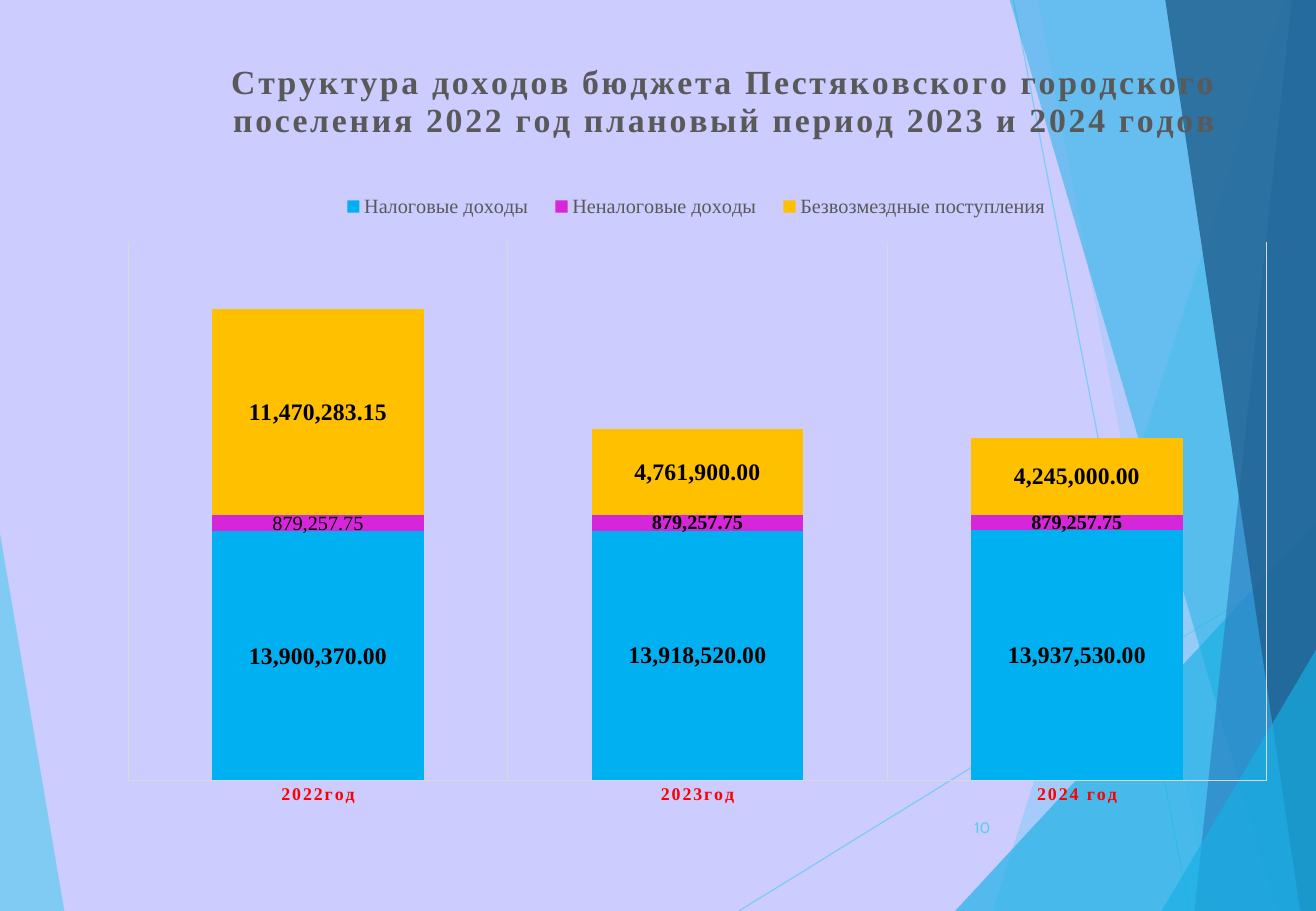
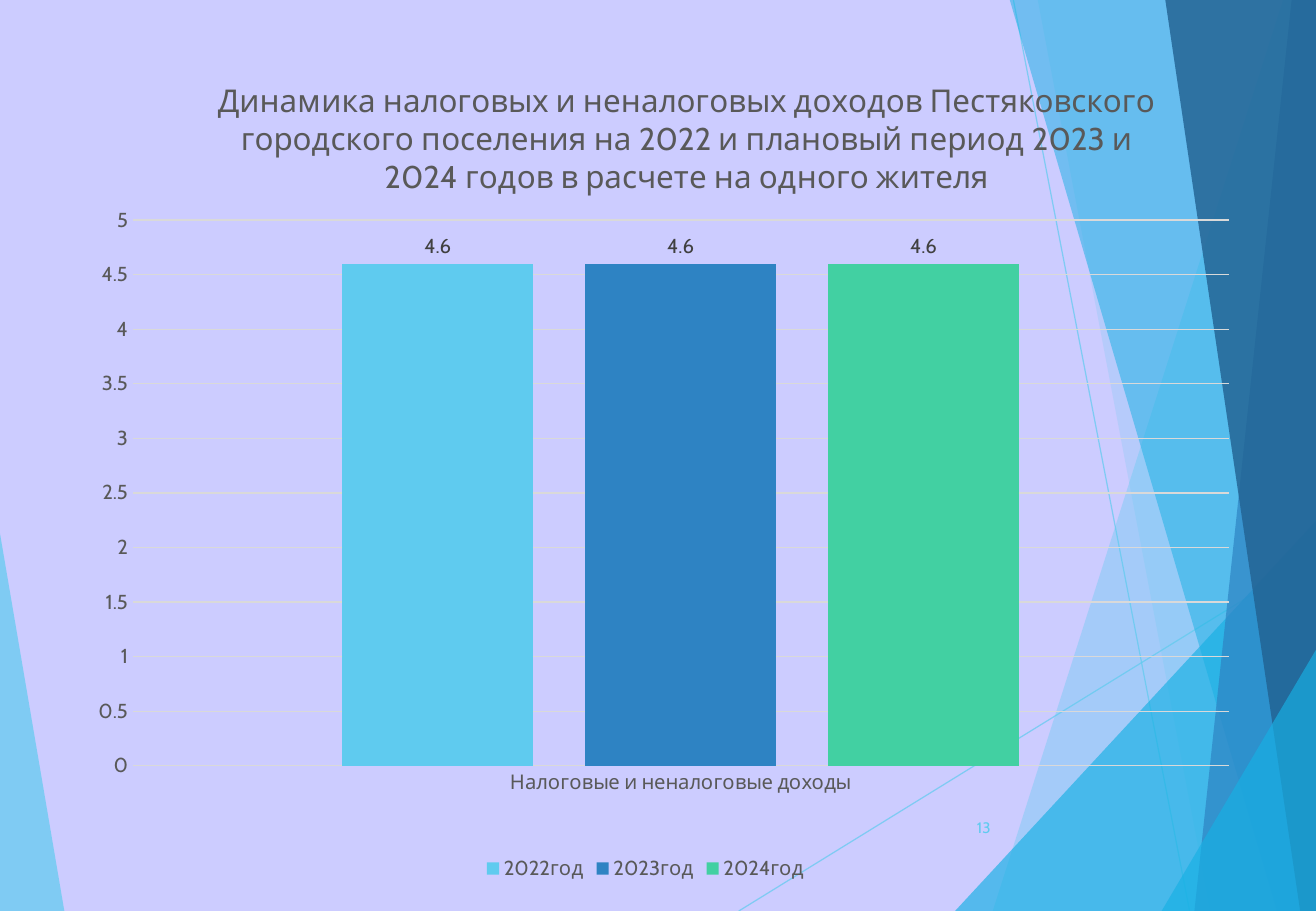
from dataclasses import dataclass

import pptx
import pptx.chart.data
import pptx.dml.color
import pptx.enum.chart
import pptx.enum.shapes
import pptx.enum.text
import pptx.oxml.ns
import pptx.oxml.xmlchemy
import pptx.util

Inches = pptx.util.Inches
qn = pptx.oxml.ns.qn
new_element = pptx.oxml.xmlchemy.OxmlElement


@dataclass(frozen=True)
class Theme:
    background: str = "CCCCFF"
    sky: str = "5FCBEF"
    azure: str = "17B0E4"
    blue: str = "2E83C3"
    navy: str = "226292"
    green: str = "42D0A2"
    tax: str = "00B0F0"
    non_tax: str = "D626DA"
    grants: str = "FFC000"
    text: str = "595959"
    label: str = "404040"
    black: str = "000000"
    red: str = "FF0000"
    grid: str = "D9D9D9"
    sans: str = "Cabin"
    serif: str = "Times New Roman"
    title_size: float = 20
    light_title_size: float = 18.6
    value_size: float = 14
    body_size: float = 12
    category_size: float = 10.6
    chart_size: float = 10
    number_size: float = 9
    hairline: float = 0.75


THEME = Theme()
WIDTH, HEIGHT = 10.83, 7.5

LEFT_WEDGE = (THEME.sky, 70, [(0, 4.39), (0.53, HEIGHT), (0, HEIGHT)])
RIGHT_FACETS = [
    (THEME.sky, 36, [(10.56, 0), (8.17, HEIGHT), (WIDTH, HEIGHT), (WIDTH, 0)]),
    (THEME.sky, 20, [(8.54, 0), (9.96, HEIGHT), (WIDTH, HEIGHT), (WIDTH, 0)]),
    (THEME.azure, 66, [(7.86, HEIGHT), (WIDTH, 4.29), (WIDTH, HEIGHT)]),
    (THEME.azure, 50, [(8.31, 0), (10.51, HEIGHT), (WIDTH, HEIGHT), (WIDTH, 0)]),
    (THEME.blue, 70, [(10.63, 0), (9.83, HEIGHT), (WIDTH, HEIGHT), (WIDTH, 0)]),
    (THEME.navy, 82, [(9.59, 0), (10.7, HEIGHT), (WIDTH, HEIGHT), (WIDTH, 0)]),
    (THEME.azure, 66, [(9.56, HEIGHT), (WIDTH, 5.35), (WIDTH, HEIGHT)]),
]
RAYS = [((6.08, HEIGHT), (WIDTH, 4.57)), ((8.34, 0), (9.79, HEIGHT))]


def rgb(color):
    return pptx.dml.color.RGBColor.from_string(color)


def style_font(font, name, size, color, bold=False, spacing=None):
    font.name, font.size, font.bold = name, pptx.util.Pt(size), bold
    font.color.rgb = rgb(color)
    if spacing:
        font._rPr.set("spc", str(spacing))


def style_line(line, color):
    line.color.rgb = rgb(color)
    line.width = pptx.util.Pt(THEME.hairline)


def set_opacity(shape, percent):
    for color in shape._element.spPr.findall(".//" + qn("a:srgbClr")):
        alpha = new_element("a:alpha")
        alpha.set("val", str(percent * 1000))
        color.append(alpha)


def set_layout(element, inner=False, **fractions):
    layout = element.find(qn("c:layout"))
    if layout is None:
        layout = new_element("c:layout")
        element.insert(0, layout)
    manual = new_element("c:manualLayout")
    layout.append(manual)
    settings = [("layoutTarget", "inner")] if inner else []
    settings += [("xMode", "edge"), ("yMode", "edge"), *fractions.items()]
    for tag, value in settings:
        child = new_element(f"c:{tag}")
        child.set("val", str(value))
        manual.append(child)


class Deck:
    def __init__(self, theme):
        self.theme = theme
        self.presentation = pptx.Presentation()
        self.presentation.slide_width = Inches(WIDTH)
        self.presentation.slide_height = Inches(HEIGHT)
        fill = self.presentation.slide_master.background.fill
        fill.solid()
        fill.fore_color.rgb = rgb(theme.background)
        self.slide = None

    def add_slide(self):
        blank = self.presentation.slide_layouts[6]
        self.slide = self.presentation.slides.add_slide(blank)
        self.add_facet(*LEFT_WEDGE)
        for start, end in RAYS:
            self.add_ray(start, end)
        for facet in RIGHT_FACETS:
            self.add_facet(*facet)

    def add_facet(self, color, opacity, points):
        corners = [(Inches(x), Inches(y)) for x, y in points]
        builder = self.slide.shapes.build_freeform(*corners[0])
        builder.add_line_segments(corners[1:], close=True)
        shape = builder.convert_to_shape()
        shape.shadow.inherit = False
        shape.fill.solid()
        shape.fill.fore_color.rgb = rgb(color)
        shape.line.fill.background()
        set_opacity(shape, opacity)

    def add_ray(self, start, end):
        ray = self.slide.shapes.add_connector(
            pptx.enum.shapes.MSO_CONNECTOR.STRAIGHT,
            *(Inches(value) for value in (*start, *end)))
        style_line(ray.line, self.theme.sky)
        set_opacity(ray, 70)
        ray._element.spPr.append(new_element("a:effectLst"))

    def add_number(self, number):
        box = self.slide.shapes.add_textbox(
            Inches(7.64), Inches(6.61), Inches(0.61), Inches(0.4))
        frame = box.text_frame
        frame.word_wrap = True
        frame.vertical_anchor = pptx.enum.text.MSO_ANCHOR.MIDDLE
        frame.text = str(number)
        paragraph = frame.paragraphs[0]
        paragraph.alignment = pptx.enum.text.PP_ALIGN.RIGHT
        style_font(paragraph.runs[0].font, self.theme.sans,
                   self.theme.number_size, self.theme.sky)

    def add_chart(self, kind, box, categories, series, number_format,
                  gap, overlap, plot_area):
        data = pptx.chart.data.CategoryChartData(number_format=number_format)
        data.categories = categories
        for name, values, _ in series:
            data.add_series(name, values)
        chart = self.slide.shapes.add_chart(
            kind, *(Inches(value) for value in box), data).chart
        style_font(chart.font, self.theme.sans, self.theme.chart_size, self.theme.black)
        plot = chart.plots[0]
        plot.gap_width, plot.overlap, plot.vary_by_categories = gap, overlap, False
        for column, (_, _, color) in zip(plot.series, series):
            column.format.fill.solid()
            column.format.fill.fore_color.rgb = rgb(color)
        for axis in (chart.category_axis, chart.value_axis):
            axis.major_tick_mark = axis.minor_tick_mark = pptx.enum.chart.XL_TICK_MARK.NONE
        style_line(chart.category_axis.format.line, self.theme.grid)
        set_layout(chart._chartSpace.chart.plotArea, inner=True,
                   **dict(zip("xywh", plot_area)))
        return chart

    def add_title(self, chart, text, x, y, **font):
        title = chart.chart_title
        title.include_in_layout = False
        title.text_frame.text = text
        style_font(title.text_frame.paragraphs[0].runs[0].font,
                   color=self.theme.text, **font)
        set_layout(title._element, x=x, y=y)

    def add_legend(self, chart, position, font_name, **layout):
        chart.has_legend = True
        legend = chart.legend
        legend.position = position
        legend.include_in_layout = False
        style_font(legend.font, font_name, self.theme.body_size, self.theme.text)
        if layout:
            set_layout(legend._element, **layout)

    def add_labels(self, series, number_format, **font):
        labels = series.data_labels
        labels.show_value = True
        labels.number_format = number_format
        labels.number_format_is_linked = False
        style_font(labels.font, **font)
        return labels

    def add_gridlines(self, axis):
        axis.has_major_gridlines = True
        style_line(axis.major_gridlines.format.line, self.theme.grid)


def add_income_structure(deck):
    theme = deck.theme
    money = "#,##0.00"
    deck.add_slide()
    chart = deck.add_chart(
        pptx.enum.chart.XL_CHART_TYPE.COLUMN_STACKED, (0.49, 0.2, 10.48, 7.06),
        ["2022год", "2023год", "2024 год"],
        [("Налоговые доходы", (13900370, 13918520, 13937530), theme.tax),
         ("Неналоговые доходы", (879257.75,) * 3, theme.non_tax),
         ("Безвозмездные поступления", (11470283.15, 4761900, 4245000), theme.grants)],
        money, gap=79, overlap=100, plot_area=(0.054, 0.254, 0.894, 0.628))
    deck.add_title(
        chart, "Структура доходов бюджета Пестяковского городского "
        "поселения 2022 год плановый период 2023 и 2024 годов",
        0.13, 0.035, name=theme.serif, size=theme.title_size, bold=True, spacing=150)
    deck.add_legend(chart, pptx.enum.chart.XL_LEGEND_POSITION.TOP, theme.serif,
                    x=0.21, y=0.19, w=0.58, h=0.045)
    style_font(chart.category_axis.tick_labels.font, theme.serif,
               theme.category_size, theme.red, bold=True, spacing=120)
    deck.add_gridlines(chart.category_axis)
    chart.value_axis.has_major_gridlines = False
    chart.value_axis.minimum_scale, chart.value_axis.maximum_scale = 0, 30000000
    chart.value_axis.visible = False
    taxes, non_taxes, grants = chart.plots[0].series
    for series, size in ((taxes, theme.value_size), (non_taxes, theme.body_size),
                         (grants, theme.value_size)):
        deck.add_labels(series, money, name=theme.serif, size=size,
                        color=theme.black, bold=True)
    style_font(non_taxes.points[0].data_label.font, theme.serif,
               theme.body_size, theme.black)
    deck.add_number(10)


def add_income_per_resident(deck):
    theme = deck.theme
    deck.add_slide()
    chart = deck.add_chart(
        pptx.enum.chart.XL_CHART_TYPE.COLUMN_CLUSTERED, (0.36, 0.46, 9.9, 6.83),
        ["Налоговые и неналоговые доходы"],
        [("2022год", (4.6,), theme.sky), ("2023год", (4.6,), theme.blue),
         ("2024год", (4.6,), theme.green)],
        "General", gap=219, overlap=-27, plot_area=(0.074, 0.198, 0.911, 0.658))
    deck.add_title(
        chart, "Динамика налоговых и неналоговых доходов Пестяковского "
        "городского поселения на 2022 и плановый период 2023 и "
        "2024 годов в расчете на одного жителя",
        0.14, 0.02, name=theme.sans, size=theme.light_title_size)
    deck.add_legend(chart, pptx.enum.chart.XL_LEGEND_POSITION.BOTTOM, theme.sans)
    for axis in (chart.category_axis, chart.value_axis):
        style_font(axis.tick_labels.font, theme.sans, theme.body_size, theme.text)
    value_axis = chart.value_axis
    value_axis.minimum_scale, value_axis.maximum_scale = 0, 5
    value_axis.major_unit = 0.5
    value_axis.format.line.fill.background()
    deck.add_gridlines(value_axis)
    for series in chart.plots[0].series:
        labels = deck.add_labels(series, "General", name=theme.sans,
                                 size=theme.body_size, color=theme.label)
        labels.position = pptx.enum.chart.XL_LABEL_POSITION.OUTSIDE_END
    deck.add_number(13)


def main():
    deck = Deck(THEME)
    add_income_structure(deck)
    add_income_per_resident(deck)
    deck.presentation.save("out.pptx")


if __name__ == "__main__":
    main()
